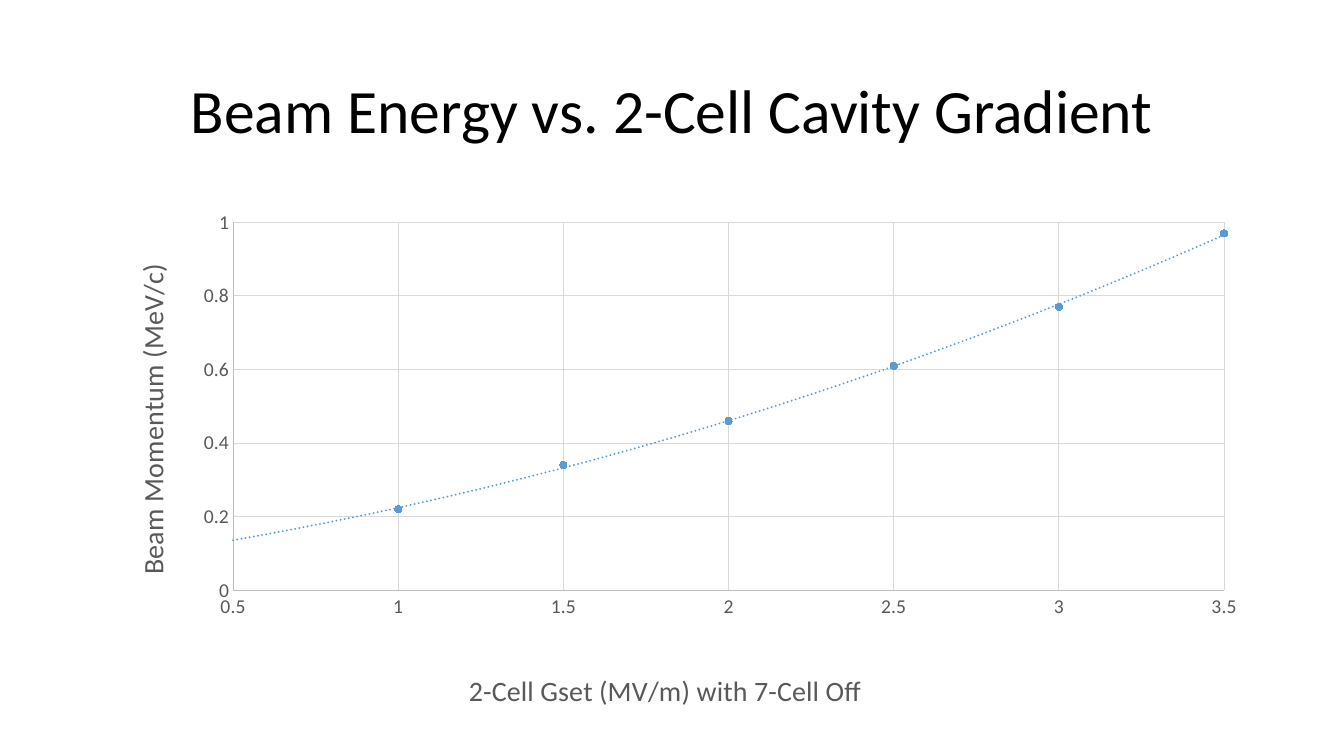
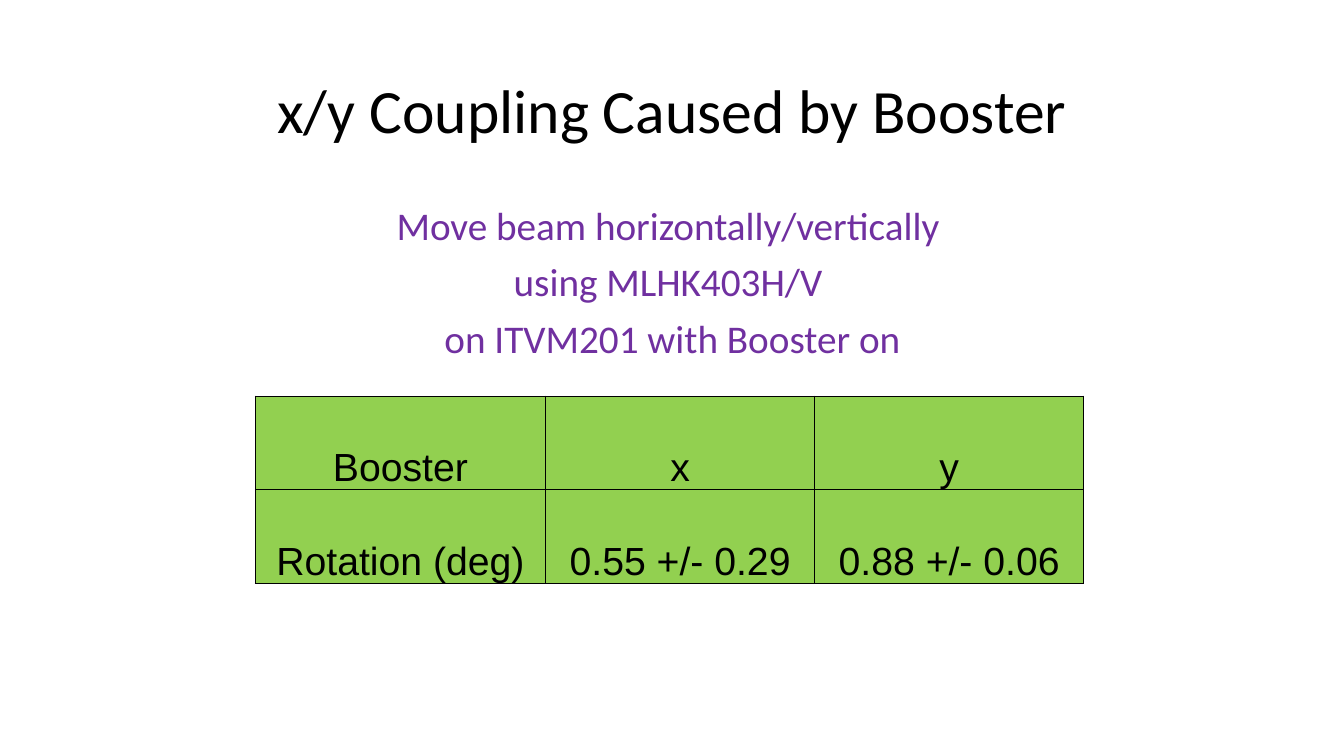
import lxml.etree
import pptx
import pptx.chart.data
import pptx.dml.color
import pptx.enum.chart
import pptx.enum.dml
import pptx.enum.text
import pptx.oxml
import pptx.oxml.ns
import pptx.util
from pptx.util import Cm, Pt

RGBColor = pptx.dml.color.RGBColor
BLACK = RGBColor(0x00, 0x00, 0x00)
PURPLE = RGBColor(0x70, 0x30, 0xA0)
GREEN = RGBColor(0x92, 0xD0, 0x50)
BLUE = RGBColor(0x5B, 0x9B, 0xD5)
LABEL_GRAY = RGBColor(0x59, 0x59, 0x59)
AXIS_GRAY = RGBColor(0xBF, 0xBF, 0xBF)
GRID_GRAY = RGBColor(0xD9, 0xD9, 0xD9)

CENTER = pptx.enum.text.PP_ALIGN.CENTER
MIDDLE = pptx.enum.text.MSO_ANCHOR.MIDDLE
BOTTOM = pptx.enum.text.MSO_ANCHOR.BOTTOM
NO_FIT = pptx.enum.text.MSO_AUTO_SIZE.NONE

SLIDE_SIZE = {"slide_width": Cm(33.87), "slide_height": Cm(19.05)}
LEFT, WIDTH = Cm(2.34), Cm(29.21)
TITLE_BOX = {"left": LEFT, "top": Cm(1.02), "width": WIDTH, "height": Cm(3.68)}
BODY_BOX = {"left": LEFT, "top": Cm(5.08), "width": WIDTH, "height": Cm(12.09)}
TITLE_FONT = {"name": "Calibri", "size": Pt(44), "bold": False}
BODY_FONT = {"name": "Calibri", "size": Pt(28), "bold": False}
TABLE_FONT = {"name": "Arial", "size": Pt(28), "bold": False}
TICK_FONT = {"name": "Calibri", "size": Pt(14), "bold": False}
AXIS_TITLE_FONT = {"name": "Calibri", "size": Pt(20), "bold": False}
TITLE_PARAGRAPH = {"alignment": CENTER, "line_spacing": 0.9}
BODY_PARAGRAPH = {**TITLE_PARAGRAPH, "space_before": Pt(10)}
CELL_FORMAT = {
    "vertical_anchor": BOTTOM,
    "margin_left": Cm(0.03),
    "margin_right": Cm(0.03),
    "margin_top": Cm(0.03),
    "margin_bottom": 0,
}


def apply_format(target, values):
    for name, value in values.items():
        setattr(target, name, value)


def format_font(font, values, color):
    apply_format(font, values)
    font.color.rgb = color


def format_line(line, color, width):
    line.color.rgb = color
    line.width = Pt(width)


def fill_placeholder(shape, box, lines, font, color, paragraph_format, anchor):
    apply_format(shape, box)
    frame = shape.text_frame
    frame.text = "\n".join(lines)
    apply_format(frame, {"auto_size": NO_FIT, "vertical_anchor": anchor})
    for paragraph in frame.paragraphs:
        apply_format(paragraph, paragraph_format)
        format_font(paragraph.runs[0].font, font, color)


def add_titled_slide(presentation, layout_index, title):
    slide = presentation.slides.add_slide(presentation.slide_layouts[layout_index])
    fill_placeholder(slide.shapes.title, TITLE_BOX, [title], TITLE_FONT, BLACK,
                     TITLE_PARAGRAPH, MIDDLE)
    return slide


def remove_bullets(frame):
    for paragraph in frame.paragraphs:
        properties = paragraph._p.get_or_add_pPr()
        properties.set("marL", "0")
        properties.set("indent", "0")
        lxml.etree.SubElement(properties, pptx.oxml.ns.qn("a:buNone"))


def chart_element(content):
    """Parse chart XML with the chart and drawing namespaces declared."""
    name = content[1:].split(">")[0].split(" ")[0]
    declared = f"<{name} {pptx.oxml.ns.nsdecls('c', 'a')}"
    return pptx.oxml.parse_xml(content.replace(f"<{name}", declared, 1))


def set_layout(parent, values, target=""):
    """Place a chart part by fractions of the chart area."""
    for layout in parent.findall(pptx.oxml.ns.qn("c:layout")):
        parent.remove(layout)
    modes = '<c:xMode val="edge"/><c:yMode val="edge"/>'
    sizes = "".join(f'<c:{name} val="{value}"/>' for name, value in values.items())
    layout = chart_element(
        f"<c:layout><c:manualLayout>{target}{modes}{sizes}</c:manualLayout></c:layout>")
    text = parent.find(pptx.oxml.ns.qn("c:tx"))
    parent.insert(0 if text is None else 1, layout)


def format_axis(axis, title, title_place, scale, rotation):
    apply_format(axis, {
        **scale,
        "has_major_gridlines": True,
        "has_minor_gridlines": False,
        "major_tick_mark": pptx.enum.chart.XL_TICK_MARK.NONE,
        "minor_tick_mark": pptx.enum.chart.XL_TICK_MARK.NONE,
    })
    format_line(axis.format.line, AXIS_GRAY, 0.75)
    format_line(axis.major_gridlines.format.line, GRID_GRAY, 0.75)
    format_font(axis.tick_labels.font, TICK_FONT, LABEL_GRAY)
    frame = axis.axis_title.text_frame
    frame.text = title
    frame._txBody.bodyPr.set("rot", str(rotation * 60000))
    format_font(frame.paragraphs[0].runs[0].font, AXIS_TITLE_FONT, LABEL_GRAY)
    set_layout(axis.axis_title._element, title_place)


def add_trend_line(series, color):
    """Add a dotted quadratic trend that reaches half a unit to the left."""
    trend_line = chart_element(
        '<c:trendline><c:spPr><a:ln w="19050" cap="rnd"><a:solidFill>'
        f'<a:srgbClr val="{color}"/></a:solidFill><a:prstDash val="sysDot"/></a:ln></c:spPr>'
        '<c:trendlineType val="poly"/><c:order val="2"/><c:backward val="0.5"/>'
        '<c:dispRSqr val="0"/><c:dispEq val="0"/></c:trendline>')
    series._element.find(pptx.oxml.ns.qn("c:xVal")).addprevious(trend_line)


def add_momentum_chart(slide):
    data = pptx.chart.data.XyChartData()
    points = data.add_series("Series 1")
    for gradient, momentum in zip((1, 1.5, 2, 2.5, 3, 3.5),
                                  (0.22, 0.34, 0.46, 0.61, 0.77, 0.97)):
        points.add_data_point(gradient, momentum)
    chart = slide.shapes.add_chart(
        pptx.enum.chart.XL_CHART_TYPE.XY_SCATTER, LEFT, Cm(5.08), WIDTH, Cm(13.13), data).chart
    apply_format(chart, {"has_title": False, "has_legend": False})
    format_font(chart.font, {"name": "Calibri", "size": Pt(10)}, BLACK)
    chart.plots[0].vary_by_categories = False
    set_layout(chart._chartSpace.chart.plotArea,
               {"x": 0.121, "y": 0.04, "w": 0.855, "h": 0.706},
               '<c:layoutTarget val="inner"/>')

    format_axis(chart.category_axis, "2-Cell Gset (MV/m) with 7-Cell Off",
                {"x": 0.32, "y": 0.89},
                {"minimum_scale": 0.5, "maximum_scale": 3.5, "major_unit": 0.5}, 0)
    format_axis(chart.value_axis, "Beam Momentum (MeV/c)", {"x": 0.03, "y": 0.11},
                {"minimum_scale": 0, "maximum_scale": 1, "major_unit": 0.2}, -90)

    series = chart.plots[0].series[0]
    series.smooth = False
    series.format.line.fill.background()
    apply_format(series.marker, {"style": pptx.enum.chart.XL_MARKER_STYLE.CIRCLE, "size": 5})
    series.marker.format.fill.solid()
    series.marker.format.fill.fore_color.rgb = BLUE
    format_line(series.marker.format.line, BLUE, 0.75)
    add_trend_line(series, BLUE)


def add_cell_borders(cell, color, width):
    properties = cell._tc.get_or_add_tcPr()
    for side in "LRTB":
        properties.append(pptx.oxml.parse_xml(
            f'<a:ln{side} {pptx.oxml.ns.nsdecls("a")} w="{Pt(width)}"><a:solidFill>'
            f'<a:srgbClr val="{color}"/></a:solidFill></a:ln{side}>'))


def add_table(slide, rows, left, top, column_widths, row_height):
    table = slide.shapes.add_table(len(rows), len(column_widths), left, top,
                                   sum(column_widths), row_height * len(rows)).table
    apply_format(table, {"first_row": False, "horz_banding": False})
    for column, width in zip(table.columns, column_widths):
        column.width = width
    for row, texts in zip(table.rows, rows):
        row.height = row_height
        for cell, text in zip(row.cells, texts):
            cell.text = text
            apply_format(cell, CELL_FORMAT)
            add_cell_borders(cell, BLACK, 0.5)
            cell.fill.solid()
            cell.fill.fore_color.rgb = GREEN
            paragraph = cell.text_frame.paragraphs[0]
            paragraph.alignment = CENTER
            format_font(paragraph.runs[0].font, TABLE_FONT, BLACK)


def main():
    presentation = pptx.Presentation()
    apply_format(presentation, SLIDE_SIZE)

    energy_slide = add_titled_slide(presentation, 5, "Beam Energy vs. 2-Cell Cavity Gradient")
    add_momentum_chart(energy_slide)

    coupling_slide = add_titled_slide(presentation, 1, "x/y Coupling Caused by Booster")
    body = coupling_slide.placeholders[1]
    fill_placeholder(body, BODY_BOX, [
        "Move beam horizontally/vertically ",
        "using MLHK403H/V ",
        "on ITVM201 with Booster on",
    ], BODY_FONT, PURPLE, BODY_PARAGRAPH, pptx.enum.text.MSO_ANCHOR.TOP)
    remove_bullets(body.text_frame)
    add_table(coupling_slide, [
        ["Booster", "x", "y"],
        ["Rotation (deg)", "0.55 +/- 0.29", "0.88 +/- 0.06"],
    ], Cm(6.43), Cm(9.98), [Cm(7.32), Cm(6.78), Cm(6.78)], Cm(2.36))

    presentation.save("out.pptx")


if __name__ == "__main__":
    main()
